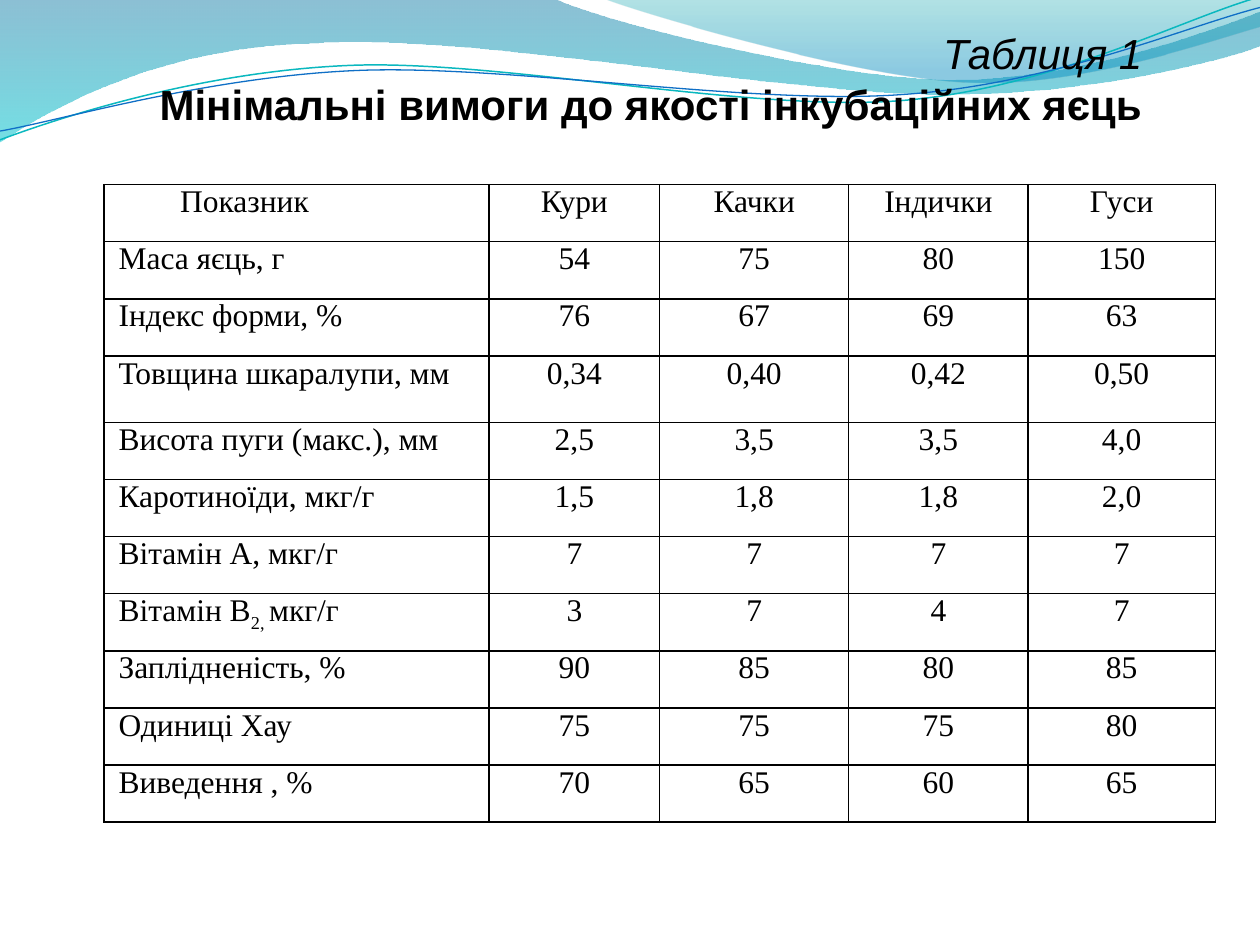
import math

from lxml import etree
from pptx import Presentation
from pptx.dml.color import RGBColor
from pptx.enum.text import MSO_ANCHOR, MSO_AUTO_SIZE, PP_ALIGN
from pptx.oxml.ns import qn
from pptx.util import Pt

LEFT, CENTER, RIGHT = PP_ALIGN.LEFT, PP_ALIGN.CENTER, PP_ALIGN.RIGHT
TOP, NO_FIT = MSO_ANCHOR.TOP, MSO_AUTO_SIZE.NONE

BLACK = RGBColor(0x00, 0x00, 0x00)
DEEP_BLUE = RGBColor(0x00, 0x74, 0xA1)
AQUA = RGBColor(0x00, 0xC6, 0xCF)
TEAL = RGBColor(0x00, 0xA1, 0xA9)
SKY_BLUE = RGBColor(0x00, 0x8B, 0xBF)
LINE_TEAL = RGBColor(0x0A, 0xB8, 0xBF)
LINE_BLUE = RGBColor(0x0F, 0x6F, 0xC6)

# Paths in points: a pair is a straight step, six numbers are a Bezier curve.
LEFT_WAVE = [
    (0, 0), (316.8, -0.7),
    (342.7, 12.2, 478.1, 45.4, 545.8, 45.4),
    (614.2, 45.4, 689.8, 18.7, 720, 6.5),
    (720.7, 25.9),
    (707.8, 31.7, 626.4, 54.7, 537.1, 54),
    (447.8, 54, 275, 20.2, 185, 24.5),
    (92.9, 25.9, 33.1, 59.8, -0.7, 81.4),
    (0, 0),
]
RIGHT_WAVE = [
    (344.9, -0.7),
    (366.5, 7.9, 491, 44.6, 553.7, 46.8),
    (616.3, 49.7, 691.9, 23, 720, 15.1),
    (720, 0),
    (344.9, -0.7),
]
TEAL_CURVE = [
    (0, 79.9),
    (34.6, 67, 113.8, 41, 199.4, 37.4),
    (284.4, 33.8, 427, 64.1, 513.4, 57.6),
    (599.8, 51.1, 675.4, 10.8, 718.6, -1.4),
]
BLUE_CURVE = [
    (0, 74.9),
    (33.8, 69.1, 118.1, 43.9, 203.8, 40.3),
    (290.2, 36.7, 429.8, 60.5, 516.2, 54),
    (601.9, 48.2, 677.5, 15.1, 720, 4.3),
]
CURVE_TILT = -2.7

COLUMNS = [220, 97.5, 108, 102.5, 107]
ROW_HEIGHT, TALL_ROW_HEIGHT, TALL_ROW = 32.65, 38, 3
ROWS = [
    ("Показник", "Кури", "Качки", "Індички", "Гуси"),
    ("Маса яєць, г", "54", "75", "80", "150"),
    ("Індекс форми, %", "76", "67", "69", "63"),
    ("Товщина шкаралупи, мм", "0,34", "0,40", "0,42", "0,50"),
    ("Висота пуги (макс.), мм", "2,5", "3,5", "3,5", "4,0"),
    ("Каротиноїди, мкг/г", "1,5", "1,8", "1,8", "2,0"),
    ("Вітамін А, мкг/г", "7", "7", "7", "7"),
    (("Вітамін В", "2, ", "мкг/г"), "3", "7", "4", "7"),
    ("Заплідненість, %", "90", "85", "80", "85"),
    ("Одиниці Хау", "75", "75", "75", "80"),
    ("Виведення , %", "70", "65", "60", "65"),
]


def turn(path, degrees, cx, cy):
    """Turn every point of a path clockwise about (cx, cy)."""
    c, s = math.cos(math.radians(degrees)), math.sin(math.radians(degrees))
    turned = []
    for step in path:
        pairs = zip(step[::2], step[1::2])
        turned.append(tuple(v for x, y in pairs for v in (
            cx + (x - cx) * c - (y - cy) * s, cy + (x - cx) * s + (y - cy) * c)))
    return turned


def add_text(p, text, font="Arial", size=18, bold=False, italic=False,
             color=BLACK, baseline=0):
    r = p.add_run()
    r.text = text
    r.font.name, r.font.size = font, Pt(size)
    r.font.bold, r.font.italic = bold, italic
    r.font.color.rgb = color
    if baseline:
        r.font._element.set("baseline", str(baseline * 1000))


def set_indent(p, left, first=0):
    pPr = p._p.get_or_add_pPr()
    pPr.set("marL", str(Pt(left)))
    pPr.set("indent", str(Pt(first)))


def set_borders(cell, color=BLACK, width=1):
    tcPr = cell._tc.get_or_add_tcPr()
    for i, side in enumerate(("lnL", "lnR", "lnT", "lnB")):
        ln = etree.Element(qn("a:" + side), w=str(Pt(width)))
        fill = etree.SubElement(ln, qn("a:solidFill"))
        etree.SubElement(fill, qn("a:srgbClr"), val=str(color))
        tcPr.insert(i, ln)


class SlideBuilder:
    """Holds the table font and the slide being built."""

    def __init__(self, slide, table_font="Times New Roman"):
        self.s = slide
        self.table_font = table_font

    def outline(self, path, close):
        """Build a freeform, then merge control points into Bezier curves."""
        points = [(Pt(x), Pt(y)) for step in path
                  for x, y in zip(step[::2], step[1::2])]
        fb = self.s.shapes.build_freeform(*points[0], scale=1.0)
        fb.add_line_segments(points[1:], close=close)
        sp = fb.convert_to_shape()
        sp.shadow.inherit = False
        segments = iter(sp._element.spPr.findall(".//" + qn("a:lnTo")))
        for step in path[1:]:
            segment = next(segments)
            if len(step) == 6:
                segment.addprevious(bezier := etree.Element(qn("a:cubicBezTo")))
                for part in (segment, next(segments), next(segments)):
                    bezier.append(part[0])
                    part.getparent().remove(part)
        return sp

    def wave(self, path, stops):
        """Draw a filled band; each stop is (position, colour, opacity %)."""
        sp = self.outline(path, close=True)
        sp.line.fill.background()
        sp.fill.gradient()
        sp.fill.gradient_angle = 270
        for gs, (position, color, _) in zip(sp.fill.gradient_stops, stops):
            gs.position = position
            gs.color.rgb = color
        colors = sp._element.spPr.findall(".//" + qn("a:gs") + "/" + qn("a:srgbClr"))
        for clr, (_, _, opacity) in zip(colors, stops):
            etree.SubElement(clr, qn("a:alpha"), val=str(opacity * 1000))

    def curve(self, path, color, width, cx, cy):
        sp = self.outline(turn(path, -CURVE_TILT, cx, cy), close=False)
        sp.rotation = CURVE_TILT
        sp.fill.background()
        sp.line.color.rgb = color
        sp.line.width = Pt(width)

    def title(self, caption, heading, x, y, w, h):
        sp = self.s.shapes.title
        sp.left, sp.top, sp.width, sp.height = Pt(x), Pt(y), Pt(w), Pt(h)
        self.s.shapes._spTree.append(sp._element)  # in front of the waves
        tf = sp.text_frame
        tf.word_wrap, tf.auto_size, tf.vertical_anchor = True, NO_FIT, TOP
        p = tf.paragraphs[0]
        p.alignment = RIGHT
        add_text(p, caption, size=24, italic=True)
        p = tf.add_paragraph()
        p.alignment = LEFT
        set_indent(p, 0, first=36)
        add_text(p, heading, size=24, bold=True)

    def table(self, rows, columns, x, y):
        heights = [ROW_HEIGHT] * len(rows)
        heights[TALL_ROW] = TALL_ROW_HEIGHT
        table = self.s.shapes.add_table(len(rows), len(columns), Pt(x), Pt(y),
                                        Pt(sum(columns)), Pt(sum(heights))).table
        table.first_row = table.horz_banding = False
        for column, width in zip(table.columns, columns):
            column.width = Pt(width)
        for i, (row, height) in enumerate(zip(rows, heights)):
            table.rows[i].height = Pt(height)
            for j, content in enumerate(row):
                indent = 0 if j else 3.3 if i else 38.5
                self.cell(table.cell(i, j), content, CENTER if j else LEFT, indent)

    def cell(self, cell, content, align, indent):
        """Fill a cell; a tuple is text, subscript, text."""
        cell.margin_left = cell.margin_right = Pt(5)
        cell.margin_top = cell.margin_bottom = 0
        cell.fill.background()
        set_borders(cell)
        p = cell.text_frame.paragraphs[0]
        p.alignment = align
        p.space_before = p.space_after = Pt(6)
        set_indent(p, indent)
        parts = (content,) if isinstance(content, str) else content
        for k, part in enumerate(parts):
            add_text(p, part, font=self.table_font, baseline=-25 if k == 1 else 0)


prs = Presentation()
prs.slide_width, prs.slide_height = Pt(720), Pt(540)
title_only = prs.slide_layouts[5]
b = SlideBuilder(prs.slides.add_slide(title_only))
b.wave(LEFT_WAVE, [(0, DEEP_BLUE, 45), (1, AQUA, 55)])
b.wave(RIGHT_WAVE, [(0, TEAL, 30), (0.8, SKY_BLUE, 45)])
b.curve(TEAL_CURVE, LINE_TEAL, 0.85, cx=359.3, cy=41.4)
b.curve(BLUE_CURVE, LINE_BLUE, 0.75, cx=359.6, cy=42.5)
b.table(ROWS, COLUMNS, x=59.5, y=105.5)
b.title("Таблиця 1", "Мінімальні вимоги до якості інкубаційних яєць",
        x=48, y=12.3, w=612, h=87)
prs.save("out.pptx")
